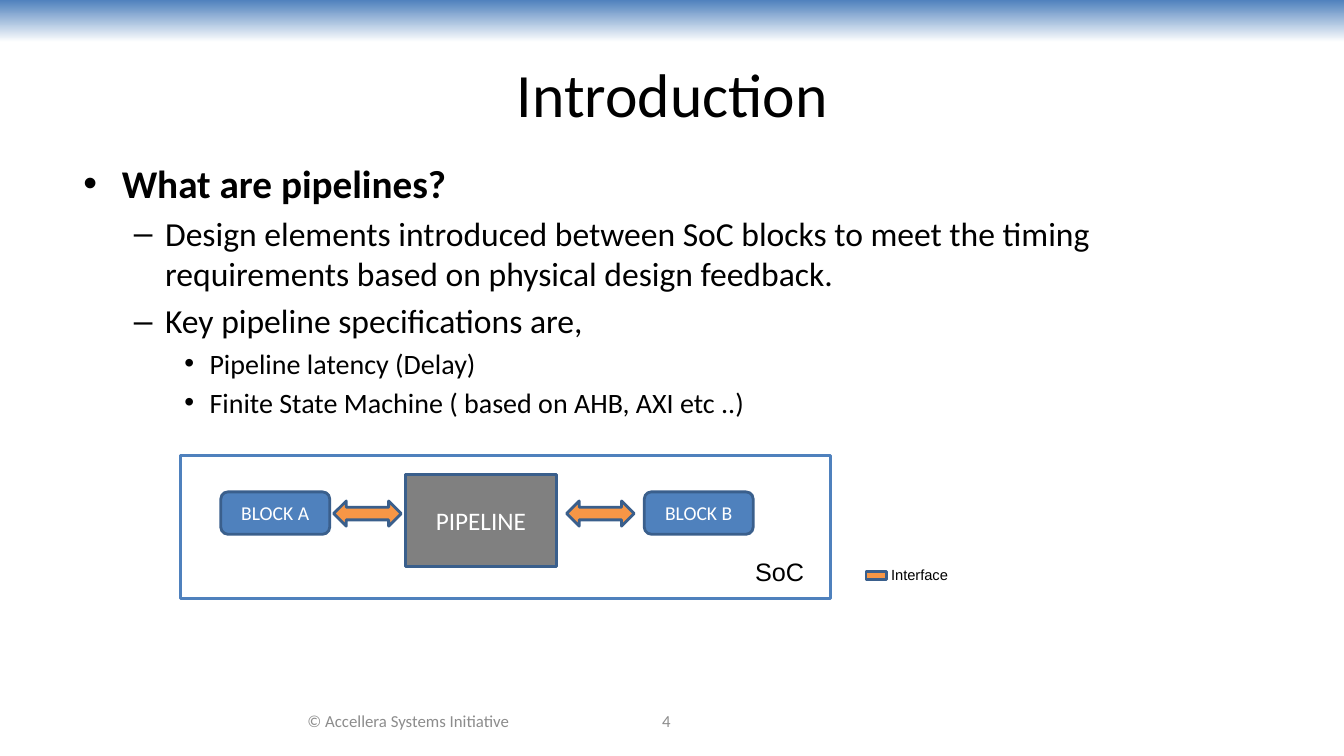
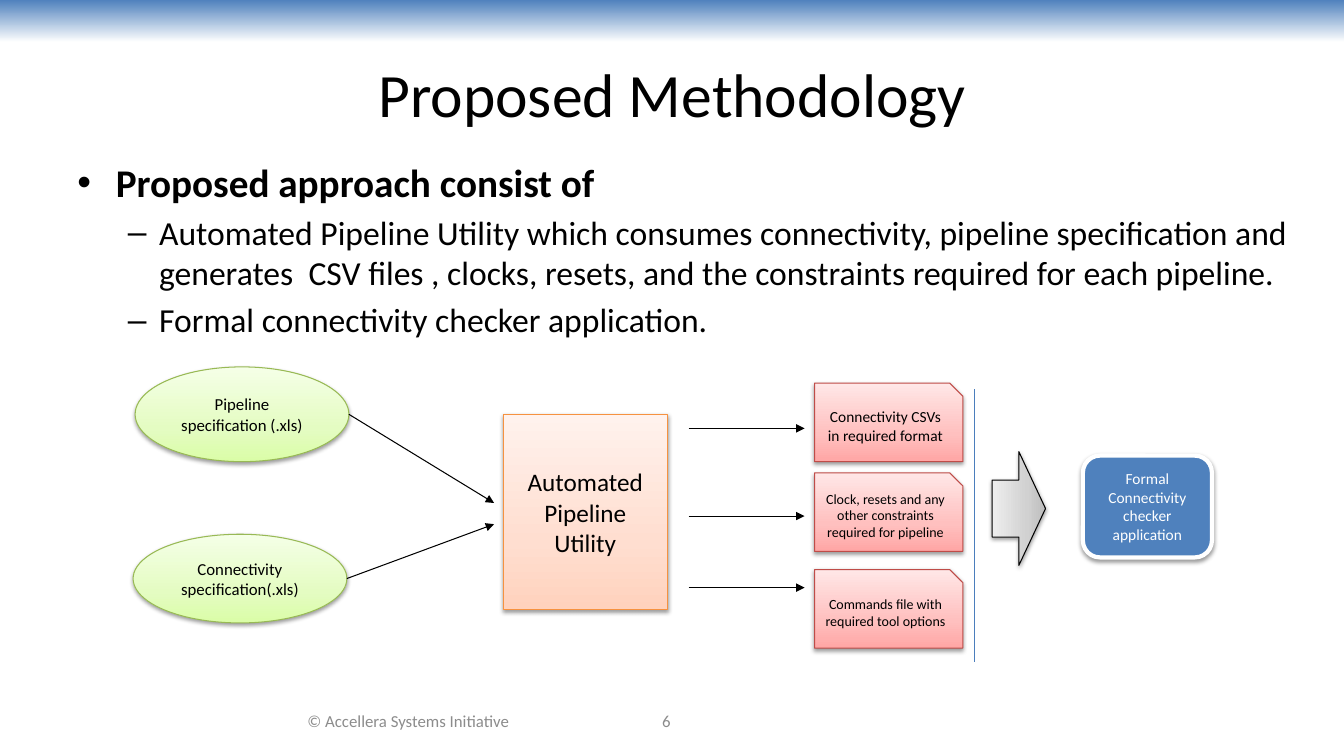
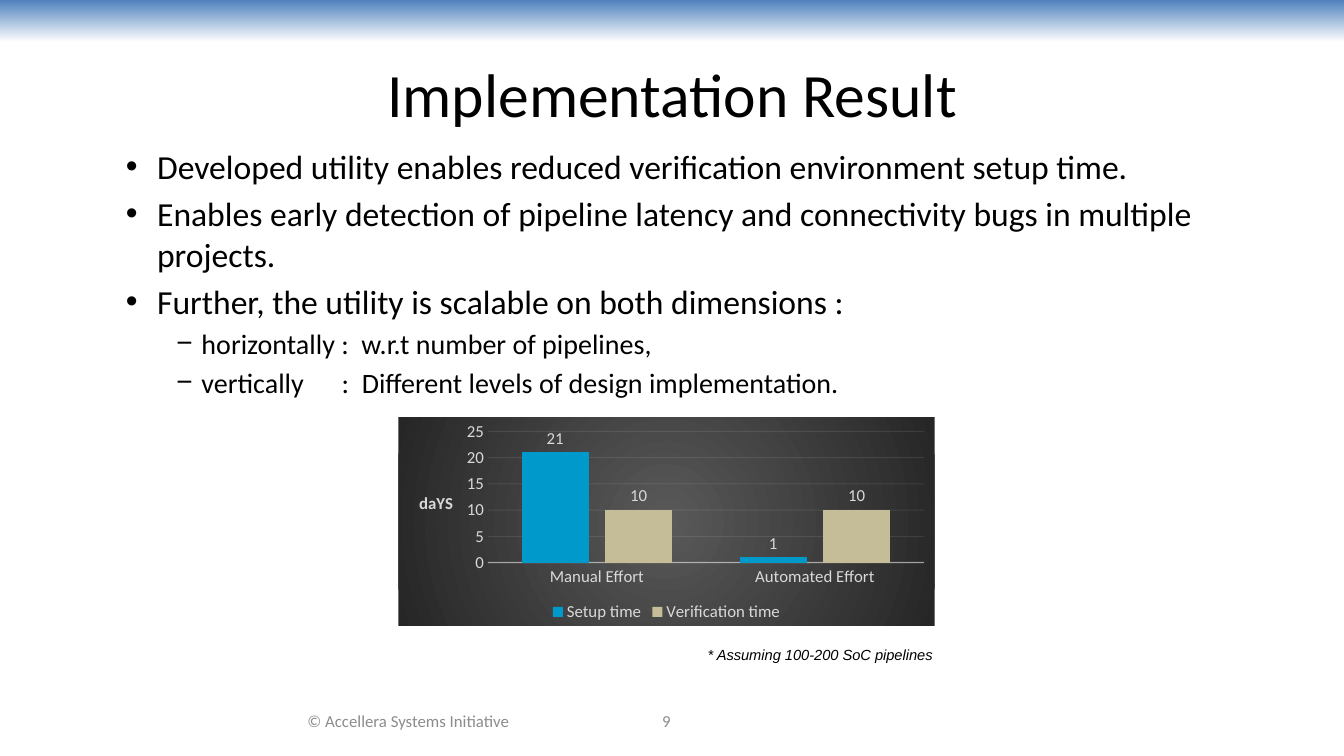
from lxml import etree
from pptx import Presentation
from pptx.chart.data import CategoryChartData
from pptx.dml.color import RGBColor
from pptx.enum.chart import XL_CHART_TYPE, XL_LABEL_POSITION, XL_LEGEND_POSITION, XL_TICK_MARK
from pptx.enum.shapes import MSO_CONNECTOR, MSO_SHAPE
from pptx.enum.text import MSO_ANCHOR, PP_ALIGN
from pptx.oxml import parse_xml
from pptx.oxml.ns import nsdecls, qn
from pptx.util import Inches, Pt

# Shared look
BLACK = RGBColor(0x00, 0x00, 0x00)
WHITE = RGBColor(0xFF, 0xFF, 0xFF)
BLUE = RGBColor(0x4F, 0x81, 0xBD)
DARK_BLUE = RGBColor(0x3A, 0x5F, 0x8C)
RULE_BLUE = RGBColor(0x4B, 0x7E, 0xBC)
ORANGE = RGBColor(0xF7, 0x96, 0x46)
ORANGE_EDGE = RGBColor(0xF6, 0x92, 0x40)
GREEN_EDGE = RGBColor(0x98, 0xB9, 0x55)
RED_EDGE = RGBColor(0xBF, 0x4C, 0x48)
GRAY = RGBColor(0x80, 0x80, 0x80)
FOOTER_GRAY = RGBColor(0x8C, 0x8C, 0x8C)
CHART_TEXT = RGBColor(0xD9, 0xD9, 0xD9)
CHART_LINE = RGBColor(0xF2, 0xF2, 0xF2)
SETUP_BLUE = RGBColor(0x00, 0x99, 0xCC)
VERIFICATION_TAN = RGBColor(0xC4, 0xBD, 0x97)

# Gradients as (position in percent, colour)
BAND_FADE = [(0, BLUE), (100, WHITE)]
GREEN_FADE = [(0, "DAFDA7"), (35, "E4FCC2"), (100, "F5FFE7")]
ORANGE_FADE = [(0, "FFD2BD"), (35, "FFDED0"), (100, "FFF2ED")]
RED_FADE = [(0, "FFA6A5"), (35, "FFC0BF"), (100, "FFE7E7")]
GRAY_FADE = [(0, "BDBDBD"), (35, "D1D1D1"), (100, "EEEEEE")]
CHART_FADE = [(0, "595959"), (100, "262626")]

# Left margin and hanging indent of each outline level, in inches
INDENTS = [(0.38, -0.38), (0.81, -0.31), (1.25, -0.25)]
SIZES = [28, 24, 20]


def gradient_xml(stops, angle=None):
    """Linear gradient at a clockwise angle, or a circular one without angle."""
    stop_xml = "".join(
        f'<a:gs pos="{position * 1000}"><a:srgbClr val="{color}"/></a:gs>'
        for position, color in stops)
    if angle is None:
        course = ('<a:path path="circle"><a:fillToRect l="50000" t="50000" '
                  'r="50000" b="50000"/></a:path>')
    else:
        course = f'<a:lin ang="{angle * 60000}" scaled="0"/>'
    return (f'<a:gradFill {nsdecls("a")} rotWithShape="1">'
            f'<a:gsLst>{stop_xml}</a:gsLst>{course}</a:gradFill>')


def add_shadow(shape):
    effects = shape.element.spPr.find(qn("a:effectLst"))
    effects.append(parse_xml(
        f'<a:outerShdw {nsdecls("a")} blurRad="{Pt(3.1)}" dist="{Pt(1.6)}" '
        'dir="5400000" rotWithShape="0"><a:srgbClr val="000000">'
        '<a:alpha val="38000"/></a:srgbClr></a:outerShdw>'))


def style_font(font, size, color, name="Calibri"):
    font.name = name
    font.size = Pt(size)
    font.color.rgb = color


def add_box(slide, kind, at, fill, edge=None, width=2, text="", size=12,
            color=WHITE, angle=270, shadow=False):
    box = slide.shapes.add_shape(kind, *map(Inches, at))
    box.shadow.inherit = False
    if isinstance(fill, list):
        box.element.spPr.find(qn("a:prstGeom")).addnext(
            parse_xml(gradient_xml(fill, angle)))
    else:
        box.fill.solid()
        box.fill.fore_color.rgb = fill
    if edge is None:
        box.line.fill.background()
    else:
        box.line.color.rgb = edge
        box.line.width = Pt(width)
    if shadow:
        add_shadow(box)
    if text:
        frame = box.text_frame
        frame.text = text
        frame.word_wrap = True
        frame.vertical_anchor = MSO_ANCHOR.MIDDLE
        frame.paragraphs[0].alignment = PP_ALIGN.CENTER
        style_font(frame.paragraphs[0].runs[0].font, size, color)
    return box


def add_centered_text(slide, at, text, size, color):
    frame = slide.shapes.add_textbox(*map(Inches, at)).text_frame
    frame.text = text
    frame.word_wrap = True
    frame.vertical_anchor = MSO_ANCHOR.MIDDLE
    frame.paragraphs[0].alignment = PP_ALIGN.CENTER
    style_font(frame.paragraphs[0].runs[0].font, size, color)


def add_label(slide, at, text, size, italic=False):
    frame = slide.shapes.add_textbox(*map(Inches, at)).text_frame
    frame.text = text
    frame.word_wrap = False
    font = frame.paragraphs[0].runs[0].font
    style_font(font, size, BLACK, "Arial")
    font.italic = italic


def add_outline(slide, at, items, tab_stops=()):
    """Bulleted text from (level, bullet, text) items."""
    frame = slide.shapes.add_textbox(*map(Inches, at)).text_frame
    frame.word_wrap = True
    for index, (level, bullet, text) in enumerate(items):
        paragraph = frame.add_paragraph() if index else frame.paragraphs[0]
        paragraph.text = text
        paragraph.level = level
        properties = paragraph.runs[0].font and paragraph._p.get_or_add_pPr()
        margin, hanging = INDENTS[level]
        properties.set("marL", str(Inches(margin)))
        properties.set("indent", str(Inches(hanging)))
        etree.SubElement(properties, qn("a:buFont")).set("typeface", "Arial")
        etree.SubElement(properties, qn("a:buChar")).set("char", bullet)
        if "\t" in text:
            tabs = etree.SubElement(properties, qn("a:tabLst"))
            for stop in tab_stops:
                tab = etree.SubElement(tabs, qn("a:tab"))
                tab.set("pos", str(Inches(stop)))
                tab.set("algn", "l")
        if index:
            paragraph.space_before = Pt(SIZES[level] * 0.2)
        font = paragraph.runs[0].font
        style_font(font, SIZES[level], BLACK)
        font.bold = level == 0


def add_line(slide, start, end, color=BLACK, arrow=True):
    line = slide.shapes.add_connector(
        MSO_CONNECTOR.STRAIGHT, *map(Inches, start + end))
    line.line.color.rgb = color
    line.line.width = Pt(0.75)
    if arrow:
        etree.SubElement(line.line._get_or_add_ln(), qn("a:tailEnd")).set("type", "triangle")
    etree.SubElement(line.element.spPr, qn("a:effectLst"))


def start_slide(prs, title, number):
    """Blank slide with the band, title and footer."""
    slide = prs.slides.add_slide(prs.slide_layouts[6])
    add_box(slide, MSO_SHAPE.RECTANGLE, (0, 0, 13.33, 0.42), BAND_FADE, angle=90)
    add_centered_text(slide, (0.67, 0.3, 12, 1.25), title, 44, BLACK)
    add_centered_text(slide, (2.44, 6.95, 3.22, 0.4),
                      "© Accellera Systems Initiative", 12, FOOTER_GRAY)
    add_centered_text(slide, (5.33, 6.95, 2.56, 0.4), str(number), 12, FOOTER_GRAY)
    return slide


def add_introduction(prs):
    slide = start_slide(prs, "Introduction", 4)
    add_outline(slide, (0.73, 1.53, 12, 2.8), [
        (0, "•", "What are pipelines?"),
        (1, "–", "Design elements introduced between SoC blocks to meet the "
                 "timing requirements based on physical design feedback."),
        (1, "–", "Key pipeline specifications are,"),
        (2, "•", "Pipeline latency (Delay)"),
        (2, "•", "Finite State Machine ( based on AHB, AXI etc ..)"),
    ])

    # SoC diagram
    add_box(slide, MSO_SHAPE.RECTANGLE, (1.79, 4.52, 6.45, 1.42), WHITE, BLUE)
    add_label(slide, (7.39, 5.47, 0.69, 0.4), "SoC", 18)
    for left, name in ((2.19, "BLOCK A"), (6.39, "BLOCK B")):
        add_box(slide, MSO_SHAPE.ROUNDED_RECTANGLE, (left, 4.88, 1.08, 0.42),
                BLUE, DARK_BLUE, text=name, size=14)
    add_box(slide, MSO_SHAPE.RECTANGLE, (4.02, 4.71, 1.5, 0.91), GRAY, DARK_BLUE,
            text="PIPELINE", size=18)
    for left in (3.31, 5.62):
        add_box(slide, MSO_SHAPE.LEFT_RIGHT_ARROW, (left, 4.97, 0.67, 0.25),
                ORANGE, DARK_BLUE)

    # Key
    add_box(slide, MSO_SHAPE.RECTANGLE, (8.59, 5.67, 0.2, 0.08), ORANGE, DARK_BLUE)
    add_label(slide, (8.74, 5.56, 0.8, 0.29), "Interface", 10.5)


def add_methodology(prs):
    slide = start_slide(prs, "Proposed Methodology", 6)
    add_outline(slide, (0.67, 1.52, 12.25, 1.81), [
        (0, "•", "Proposed approach consist of"),
        (1, "–", "Automated Pipeline Utility which consumes connectivity, pipeline "
                 "specification and generates  CSV files , clocks, resets, and the "
                 "constraints required for each pipeline."),
        (1, "–", "Formal connectivity checker application."),
    ])
    add_line(slide, (9.67, 3.86), (9.67, 6.57), RULE_BLUE, arrow=False)

    # Input specifications, each with an arrow to the utility
    for left, top, height, text, target in (
            (1.34, 3.64, 0.94, "Pipeline specification (.xls)", 4.99),
            (1.32, 5.3, 0.88, "Connectivity specification(.xls)", 5.2)):
        add_box(slide, MSO_SHAPE.OVAL, (left, top, 2.12, height), GREEN_FADE,
                GREEN_EDGE, 0.75, text, 12, BLACK, shadow=True)
        add_line(slide, (left + 2.12, top + height / 2), (4.9, target))

    add_box(slide, MSO_SHAPE.RECTANGLE, (4.99, 4.11, 1.63, 1.94), ORANGE_FADE,
            ORANGE_EDGE, 0.75, "Automated Pipeline Utility", 18, BLACK, shadow=True)

    # Generated files
    for arrow_y, top, size, text in (
            (4.25, 3.8, 11, "Connectivity CSVs in required format"),
            (5.12, 4.69, 10, "Clock, resets and any other constraints required for pipeline"),
            (5.83, 5.65, 10, "Commands file with required tool options")):
        add_line(slide, (6.83, arrow_y), (7.98, arrow_y))
        add_box(slide, MSO_SHAPE.SNIP_1_RECTANGLE, (8.08, top, 1.47, 0.78), RED_FADE,
                RED_EDGE, 0.75, text, size, BLACK, shadow=True)

    # Hand-over to the checker
    handover = add_box(slide, MSO_SHAPE.DOWN_ARROW, (9.54, 4.78, 1.13, 0.53),
                       GRAY_FADE, BLACK, 0.75, shadow=True)
    handover.rotation = 270
    add_box(slide, MSO_SHAPE.ROUNDED_RECTANGLE, (10.74, 4.52, 1.28, 1.01), BLUE, WHITE, 3,
            "Formal Connectivity checker application", 11, shadow=True)


def fade_line(element, percent):
    for color in element.iter(qn("a:srgbClr")):
        etree.SubElement(color, qn("a:alpha")).set("val", str(percent * 1000))


def add_effort_chart(slide, at):
    data = CategoryChartData()
    data.categories = ["Manual Effort", "Automated Effort"]
    data.add_series("Setup time", [21, 1])
    data.add_series("Verification time", [10, 10])
    chart = slide.shapes.add_chart(
        XL_CHART_TYPE.COLUMN_CLUSTERED, *map(Inches, at), data).chart
    style_font(chart.font, 12, CHART_TEXT)
    chart.has_title = False
    chart.has_legend = True
    chart.legend.position = XL_LEGEND_POSITION.BOTTOM
    chart.legend.include_in_layout = False
    style_font(chart.legend.font, 12, CHART_TEXT)

    # Columns
    plot = chart.plots[0]
    plot.gap_width = 100
    plot.overlap = -24
    plot.vary_by_categories = False
    for series, color in zip(plot.series, (SETUP_BLUE, VERIFICATION_TAN)):
        series.format.fill.solid()
        series.format.fill.fore_color.rgb = color
        labels = series.data_labels
        labels.show_value = True
        labels.position = XL_LABEL_POSITION.OUTSIDE_END
        style_font(labels.font, 12, CHART_TEXT)

    # Axes
    for axis in (chart.category_axis, chart.value_axis):
        axis.major_tick_mark = XL_TICK_MARK.NONE
        axis.minor_tick_mark = XL_TICK_MARK.NONE
        style_font(axis.tick_labels.font, 12, CHART_TEXT)
    effort_line = chart.category_axis.format.line
    effort_line.color.rgb = CHART_LINE
    effort_line.width = Pt(1)
    days = chart.value_axis
    days.minimum_scale, days.maximum_scale, days.major_unit = 0, 25, 5
    days.format.line.fill.background()
    days.major_gridlines.format.line.color.rgb = CHART_LINE
    days.major_gridlines.format.line.width = Pt(0.75)
    title_frame = days.axis_title.text_frame
    title_frame.text = "daYS"
    title_font = title_frame.paragraphs[0].runs[0].font
    style_font(title_font, 12, CHART_TEXT)
    title_font.bold = True

    # Upright axis title, faint lines and circular background
    root = chart.element
    title_body = root.find(f'.//{qn("c:valAx")}/{qn("c:title")}//{qn("a:bodyPr")}')
    title_body.set("rot", "0")
    title_body.set("vert", "horz")
    fade_line(root.find(f'.//{qn("c:catAx")}/{qn("c:spPr")}'), 54)
    fade_line(root.find(f'.//{qn("c:majorGridlines")}'), 10)
    root.find(qn("c:chart")).addnext(parse_xml(
        f'<c:spPr {nsdecls("c", "a")}>{gradient_xml(CHART_FADE)}'
        '<a:ln><a:noFill/></a:ln></c:spPr>'))


def add_result(prs):
    slide = start_slide(prs, "Implementation Result", 9)
    # The nearer stop serves readers that measure tabs from the indent
    add_outline(slide, (0.65, 1.4, 12.31, 2.7), [
        (1, "•", "Developed utility enables reduced verification environment setup time."),
        (1, "•", "Enables early detection of pipeline latency and connectivity bugs "
                 "in multiple projects."),
        (1, "•", "Further, the utility is scalable on both dimensions :"),
        (2, "−", "horizontally :  w.r.t number of pipelines,"),
        (2, "−", "vertically\t:  Different levels of design implementation."),
    ], tab_stops=(1.39, 2.64))
    add_effort_chart(slide, (3.95, 4.14, 5.32, 2.07))
    add_label(slide, (6.92, 6.36, 2.53, 0.28), "* Assuming 100-200 SoC pipelines",
              10.5, italic=True)


def main():
    prs = Presentation()
    prs.slide_width = Inches(13.33)
    prs.slide_height = Inches(7.5)
    add_introduction(prs)
    add_methodology(prs)
    add_result(prs)
    prs.save("out.pptx")


if __name__ == "__main__":
    main()
